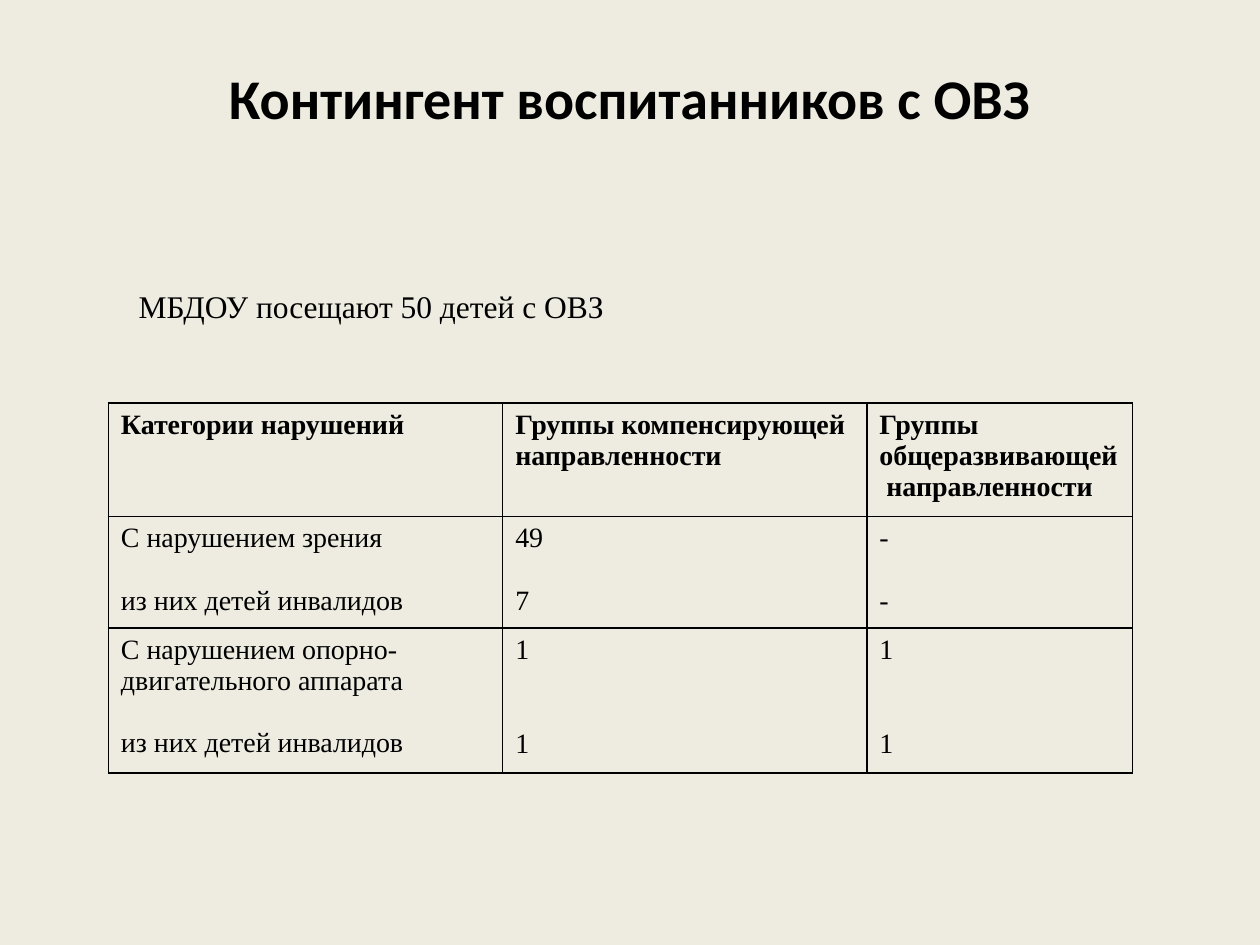
from lxml.etree import SubElement
from pptx import Presentation
from pptx.dml.color import RGBColor
from pptx.enum.text import MSO_ANCHOR, PP_ALIGN
from pptx.oxml.ns import qn
from pptx.util import Inches, Pt

COLORS = {"background": "EEECE1", "text": "000000", "border": "000000"}
SERIF = "Times New Roman"
LINE = 18
COLUMNS = [3.13, 2.89, 2.11]
ROW_HEIGHTS = [0.84, 0.84, 1.09]
ROWS = [
    [["Категории нарушений"], ["Группы компенсирующей направленности"],
     ["Группы\vобщеразвивающей\v направленности"]],
    [["С нарушением зрения", "из них детей инвалидов"], ["49", "7"], ["-", "-"]],
    [["С нарушением опорно- двигательного аппарата", "из них детей инвалидов"],
     ["1", "1"], ["1", "1"]],
]
GAPS = [[0, 0, 0], [1, 1, 1], [1, 2, 2]]


def style(p, size, font, bold=False):
    """Format every run of a paragraph."""
    for r in p.runs:
        r.font.size, r.font.name, r.font.bold = Pt(size), font, bold
        r.font.color.rgb = RGBColor.from_string(COLORS["text"])


def add_text(s, box, text):
    """Add a wrapping text box and return its text frame."""
    tf = s.shapes.add_textbox(*map(Inches, box)).text_frame
    tf.word_wrap = True
    tf.text = text
    return tf


def add_title(s, box):
    """Place the centred slide title."""
    tf = add_text(s, box, "Контингент воспитанников с ОВЗ")
    tf.vertical_anchor = MSO_ANCHOR.MIDDLE
    tf.margin_bottom = Inches(0.53)
    tf.paragraphs[0].alignment = PP_ALIGN.CENTER
    style(tf.paragraphs[0], 32, "Calibri", True)


def add_body(s, box):
    """Place the sentence that introduces the table."""
    tf = add_text(s, box, "МБДОУ посещают 50 детей с ОВЗ")
    tf.margin_left, tf.margin_top = Inches(0.6), Inches(0.53)
    style(tf.paragraphs[0], 18, SERIF)


def add_borders(cell):
    """Draw a thin line on each side of a table cell."""
    tc_pr = cell._tc.get_or_add_tcPr()
    for side in ("lnL", "lnR", "lnT", "lnB"):
        ln = SubElement(tc_pr, qn(f"a:{side}"), w=str(Pt(1)))
        fill = SubElement(ln, qn("a:solidFill"))
        SubElement(fill, qn("a:srgbClr"), val=COLORS["border"])


def fill_cell(cell, lines, gap, bold):
    """Write the lines of a cell, the later ones set apart by a gap."""
    tf = cell.text_frame
    tf.text = "\n".join(lines)
    for i, p in enumerate(tf.paragraphs):
        style(p, 16, SERIF, bold)
        if i:
            p.space_before = Pt(gap * LINE)
    add_borders(cell)
    cell.fill.background()


def add_groups_table(s, box):
    """Place the table of children by impairment and group type."""
    table = s.shapes.add_table(len(ROWS), len(COLUMNS), *map(Inches, box)).table
    table.first_row = table.horz_banding = False
    for column, width in zip(table.columns, COLUMNS):
        column.width = Inches(width)
    for i, (row, height) in enumerate(zip(table.rows, ROW_HEIGHTS)):
        row.height = Inches(height)
        for cell, lines, gap in zip(row.cells, ROWS[i], GAPS[i]):
            fill_cell(cell, lines, gap, i == 0)


def main():
    """Build and save the slide."""
    prs = Presentation()
    prs.slide_width, prs.slide_height = Inches(10), Inches(7.5)
    s = prs.slides.add_slide(prs.slide_layouts[6])
    s.background.fill.solid()
    s.background.fill.fore_color.rgb = RGBColor.from_string(COLORS["background"])
    add_title(s, (0.5, 0.3, 9, 1.42))
    add_body(s, (0.5, 1.75, 9, 4.95))
    add_groups_table(s, (0.86, 3.2, sum(COLUMNS), sum(ROW_HEIGHTS)))
    prs.save("out.pptx")


if __name__ == "__main__":
    main()
